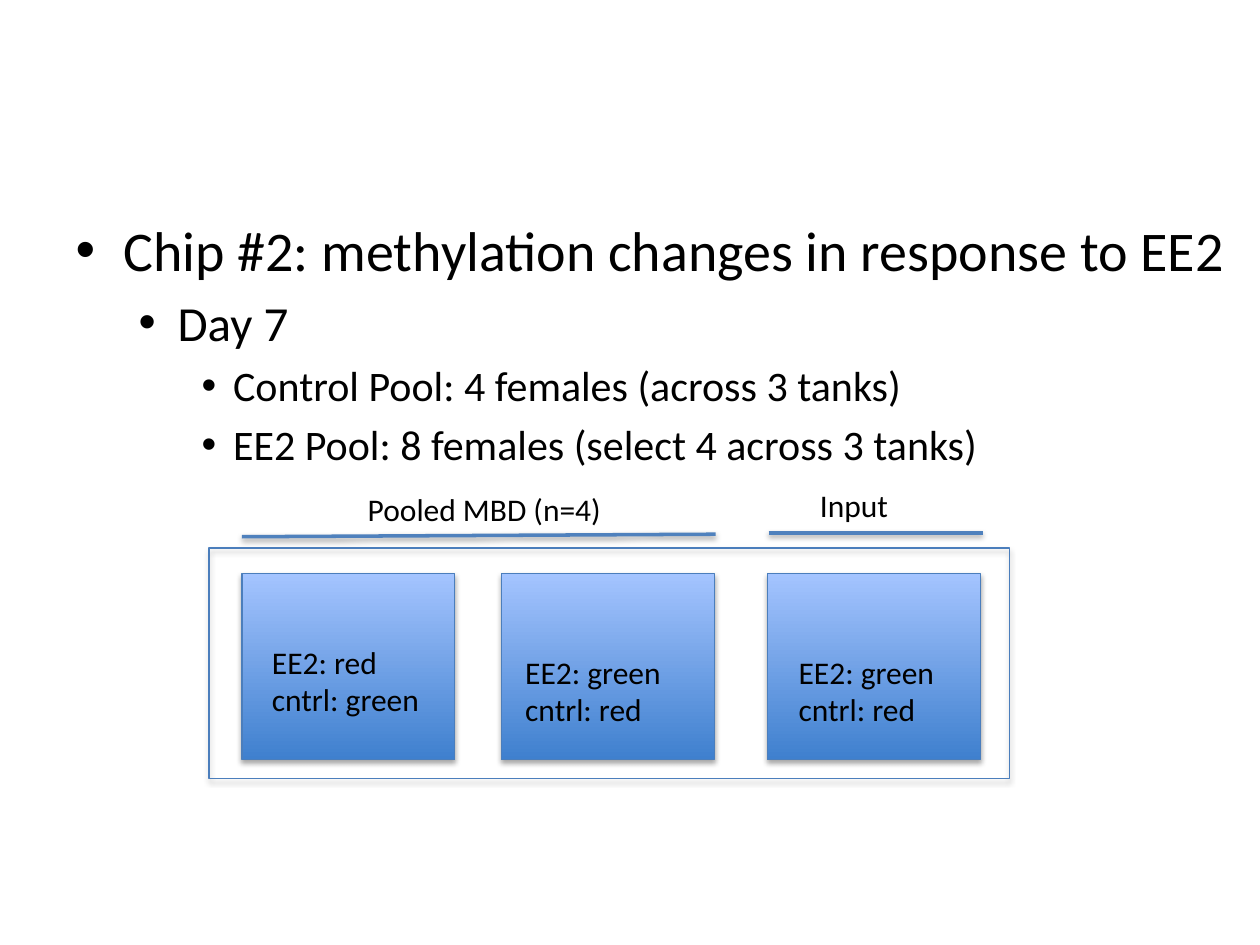
import pptx
import pptx.dml.color
import pptx.enum.shapes
import pptx.enum.text
import pptx.oxml.ns
import pptx.util
from lxml import etree
from pptx.util import Inches, Pt

FONT = "Calibri"
BLACK, EDGE, RULE = "000000", "4B7EBC", "4F81BD"
GRADIENT = ("3F80CE", "A4C4FF")

# text, size, left margin, hanging indent; the position is the outline level
OUTLINE = [
    (0, "Chip #2: methylation changes in response to EE2", 32, 0.38, 0.38),
    (1, "Day 7", 28, 0.81, 0.31),
    (2, "Control Pool: 4 females (across 3 tanks)", 24, 1.25, 0.25),
    (2, "EE2 Pool: 8 females (select 4 across 3 tanks)", 24, 1.25, 0.25),
]
FRAME = (1.66, 4.35, 6.35, 1.83)
ARRAY_TOP, ARRAY_WIDTH, ARRAY_HEIGHT = 4.55, 1.69, 1.48
ARRAY_LEFTS = [1.92, 3.98, 6.09]
LABELS = [
    (["EE2: red", "cntrl: green"], (2.06, 5.05, 1.56, 1.01)),
    (["EE2: green", "cntrl: red"], (4.07, 5.13, 1.6, 1.01)),
    (["EE2: green", "cntrl: red"], (6.24, 5.13, 1.54, 1.01)),
    (["Pooled MBD (n=4)"], (2.82, 3.84, 2.27, 0.71)),
    (["Input"], (6.41, 3.81, 1.6, 0.71)),
]
RULES = [(1.92, 4.26, 5.68, 4.24), (6.1, 4.23, 7.8, 4.23)]


def rgb(value):
    return pptx.dml.color.RGBColor.from_string(value)


def inches(values):
    return [Inches(value) for value in values]


def add_element(parent, tag, **attributes):
    element = etree.SubElement(parent, pptx.oxml.ns.qn(tag))
    for name, value in attributes.items():
        element.set(name, str(value))
    return element


def add_shadow(shape, opacity, distance):
    """Cast a soft black shadow straight down; call after the line is set."""
    effects = add_element(shape._element.spPr, "a:effectLst")
    shadow = add_element(effects, "a:outerShdw", blurRad=Pt(3.1), dist=Pt(distance),
                         dir=90 * 60000, rotWithShape=0)
    color = add_element(shadow, "a:srgbClr", val=BLACK)
    add_element(color, "a:alpha", val=opacity * 1000)


def add_span(para, text, size):
    span = para.add_run()
    span.text = text
    span.font.name = FONT
    span.font.size = Pt(size)
    span.font.color.rgb = rgb(BLACK)


def next_para(frame, index):
    return frame.add_paragraph() if index else frame.paragraphs[0]


def fill_outline(body):
    body.left, body.top, body.width, body.height = inches((0.5, 1.66, 9.5, 2.79))
    for index, (level, text, size, margin, hanging) in enumerate(OUTLINE):
        para = next_para(body.text_frame, index)
        para.level = level
        add_span(para, text, size)
        properties = para._p.get_or_add_pPr()
        properties.set("marL", str(Inches(margin)))
        properties.set("indent", str(-Inches(hanging)))
        add_element(properties, "a:buFont", typeface="Arial")
        add_element(properties, "a:buChar", char="•")


def add_rectangle(slide, place, gradient=None):
    box = slide.shapes.add_shape(pptx.enum.shapes.MSO_SHAPE.RECTANGLE, *inches(place))
    if gradient:
        box.fill.gradient()
        box.fill.gradient_angle = 90
        for stop, color in zip(box.fill.gradient_stops, gradient):
            stop.color.rgb = rgb(color)
    else:
        box.fill.background()
    box.line.color.rgb = rgb(EDGE)
    box.line.width = Pt(0.75)
    add_shadow(box, 35, 1.8)


def add_label(slide, lines, place):
    frame = slide.shapes.add_textbox(*inches(place)).text_frame
    frame.word_wrap = True
    frame.auto_size = pptx.enum.text.MSO_AUTO_SIZE.SHAPE_TO_FIT_TEXT
    for index, line in enumerate(lines):
        add_span(next_para(frame, index), line, 18)


def add_rule(slide, ends):
    rule = slide.shapes.add_connector(
        pptx.enum.shapes.MSO_CONNECTOR.STRAIGHT, *inches(ends))
    rule.line.color.rgb = rgb(RULE)
    rule.line.width = Pt(2)
    add_shadow(rule, 38, 1.6)


def main():
    deck = pptx.Presentation()
    deck.slide_width, deck.slide_height = inches((10, 7.5))
    slide = deck.slides.add_slide(deck.slide_layouts[1])
    title = slide.shapes.title._element
    title.getparent().remove(title)

    fill_outline(slide.placeholders[1])
    add_rectangle(slide, FRAME)
    for left in ARRAY_LEFTS:
        add_rectangle(slide, (left, ARRAY_TOP, ARRAY_WIDTH, ARRAY_HEIGHT), GRADIENT)
    for ends in RULES:
        add_rule(slide, ends)
    for lines, place in LABELS:
        add_label(slide, lines, place)
    deck.save("out.pptx")


if __name__ == "__main__":
    main()
